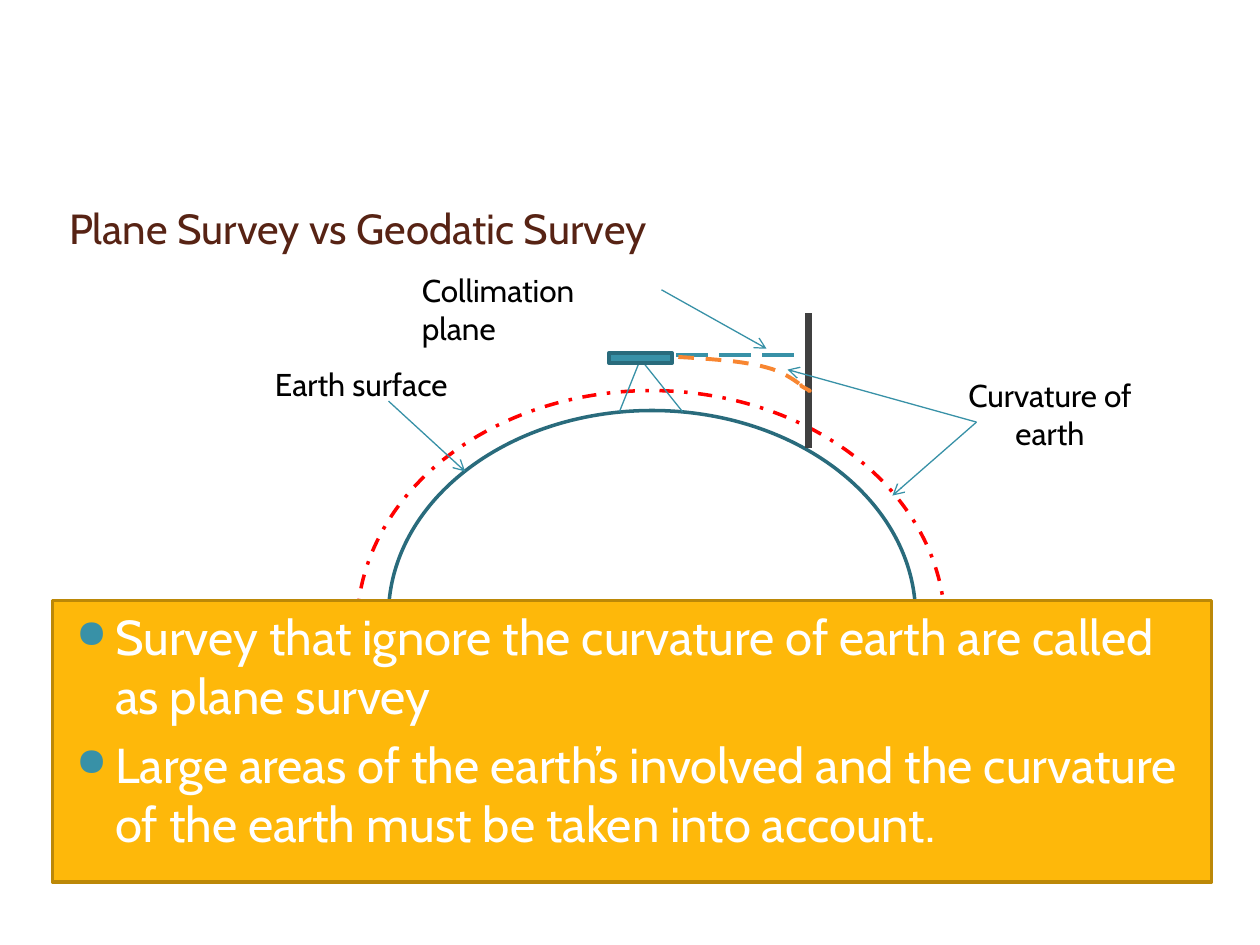
from lxml.etree import SubElement
from pptx import Presentation
from pptx.dml.color import RGBColor
from pptx.enum.dml import MSO_LINE
from pptx.enum.shapes import MSO_CONNECTOR, MSO_SHAPE
from pptx.enum.text import MSO_ANCHOR, PP_ALIGN
from pptx.oxml.ns import qn
from pptx.util import Inches, Pt

OVAL, RECT, LINE = MSO_SHAPE.OVAL, MSO_SHAPE.RECTANGLE, MSO_CONNECTOR.STRAIGHT
DASH, LONG, DOT = MSO_LINE.DASH, MSO_LINE.LONG_DASH, MSO_LINE.DASH_DOT
TOP, MIDDLE = MSO_ANCHOR.TOP, MSO_ANCHOR.MIDDLE
LEFT, CENTER = PP_ALIGN.LEFT, PP_ALIGN.CENTER

TEAL = RGBColor(0x38, 0x91, 0xA7)
DEEP = RGBColor(0x29, 0x6B, 0x7C)
RED = RGBColor(0xFF, 0x00, 0x00)
GOLD = RGBColor(0xFE, 0xB8, 0x0A)
OCHRE = RGBColor(0xBC, 0x88, 0x07)
ORANGE = RGBColor(0xF8, 0x86, 0x31)
GREY = RGBColor(0x40, 0x40, 0x40)
BROWN = RGBColor(0x57, 0x23, 0x14)
BLACK = RGBColor(0x00, 0x00, 0x00)
WHITE = RGBColor(0xFF, 0xFF, 0xFF)

WIDTH, HEIGHT = Inches(10), Inches(7.5)
COLS, ROWS = 120, 90


class Sketch:
    """Draws styled elements on one slide, placed by grid column and row."""

    font = "Cabin"

    def __init__(self, slide):
        self.slide = slide
        self.shapes = slide.shapes

    def spot(self, *cells):
        units = (WIDTH / COLS, HEIGHT / ROWS)
        return [round(cell * units[i % 2]) for i, cell in enumerate(cells)]

    def stroke(self, shape, color, width, dash=None):
        shape.line.color.rgb = color
        for name, value in {"width": Pt(width), "dash_style": dash}.items():
            setattr(shape.line, name, value)

    def shape(self, kind, box, fill, *line):
        shape = self.shapes.add_shape(kind, *self.spot(*box))
        shape.shadow.inherit = False
        if fill is None:
            shape.fill.background()
        else:
            shape.fill.solid()
            shape.fill.fore_color.rgb = fill
        self.stroke(shape, *line)
        return shape

    def line(self, start, end, color=TEAL, width=0.75, dash=None, arrow=False):
        link = self.shapes.add_connector(LINE, *self.spot(*start, *end))
        self.stroke(link, color, width, dash)
        props = link.element.spPr
        if arrow:
            SubElement(props.find(qn("a:ln")), qn("a:tailEnd"), type="arrow")
        SubElement(props, qn("a:effectLst"))

    def curve(self, knots, *line, steps=12):
        points = []
        for first in range(0, len(knots) - 1, 3):
            a, b, c, d = knots[first:first + 4]
            for step in range(1, steps + 1):
                t = step / steps
                u = 1 - t
                mix = (u ** 3, 3 * u * u * t, 3 * u * t * t, t ** 3)
                points.append(self.spot(*(
                    sum(m * p[i] for m, p in zip(mix, (a, b, c, d)))
                    for i in (0, 1))))
        trail = self.shapes.build_freeform(*self.spot(*knots[0]))
        trail.add_line_segments(points, close=False)
        shape = trail.convert_to_shape()
        shape.shadow.inherit = False
        shape.fill.background()
        self.stroke(shape, *line)

    def words(self, para, text, size, color, align=LEFT):
        para.text = text
        para.alignment = align
        style = {"name": self.font, "size": Pt(size)}
        for name, value in style.items():
            setattr(para.font, name, value)
        para.font.color.rgb = color

    def frame(self, shape, anchor):
        frame = shape.text_frame
        for name, value in {"word_wrap": True, "vertical_anchor": anchor}.items():
            setattr(frame, name, value)
        return frame

    def label(self, text, box, size=18, color=BLACK, align=LEFT, anchor=TOP):
        frame = self.frame(self.shapes.add_textbox(*self.spot(*box)), anchor)
        self.words(frame.paragraphs[0], text, size, color, align)

    def panel(self, items, box):
        frame = self.frame(self.shape(RECT, box, GOLD, OCHRE, 2), TOP)
        for i, item in enumerate(items):
            para = frame.add_paragraph() if i else frame.paragraphs[0]
            para.space_before = Pt(6 if i else 0)
            props = para._p.get_or_add_pPr()
            props.set("marL", str(Inches(0.4)))
            props.set("indent", str(Inches(-0.31)))
            tint = SubElement(props, qn("a:buClr"))
            SubElement(tint, qn("a:srgbClr"), val=str(TEAL))
            SubElement(props, qn("a:buSzPct"), val="80000")
            SubElement(props, qn("a:buChar"), char="●")
            self.words(para, item, 28, WHITE)


def main():
    deck = Presentation()
    deck.slide_width, deck.slide_height = WIDTH, HEIGHT
    art = Sketch(deck.slides.add_slide(deck.slide_layouts[6]))

    art.label("Plane Survey vs Geodatic Survey", (5.4, 18.4, 59.6, 6.6),
              24, BROWN, anchor=MIDDLE)
    art.shape(OVAL, (37, 39.1, 50.2, 39.1), None, DEEP, 2)
    art.shape(OVAL, (34, 37.2, 56, 45), None, RED, 2, DOT)
    art.panel(
        ["Survey that ignore the curvature of earth are called as plane survey",
         "Large areas of the earth’s involved and the curvature of the earth "
         "must be taken into account."],
        (5, 57.2, 110.4, 26.8))

    for foot in (59, 65):
        art.line((foot, 39.2), (61, 34.2))
    art.shape(RECT, (58, 33.6, 6, 1), TEAL, DEEP, 2)
    art.line((77, 42.7), (77, 29.8), GREY, 4.5)
    art.line((64.4, 33.8), (76.4, 33.8), TEAL, 2.25, LONG)
    art.curve([(64.6, 34), (67.8, 34.2), (70.9, 34.4), (73, 35),
               (75.1, 35.5), (76.6, 37), (77, 37.2),
               (77.6, 37.4), (75.8, 36.6), (76.4, 36.7)], ORANGE, 2.25, DASH)

    art.label("Curvature of earth", (91, 35.2, 18, 8.5), align=CENTER)
    art.label("Earth surface", (25, 34.2, 19, 4.8))
    art.label("Collimation plane", (39, 25.2, 24, 4.8))
    for start, end in (((93, 40.2), (85, 47.2)), ((93, 40.2), (75, 35.2)),
                       ((37, 38.2), (44.3, 44.9)), ((63, 27.6), (73, 33.2))):
        art.line(start, end, arrow=True)

    deck.save("out.pptx")


if __name__ == "__main__":
    main()
